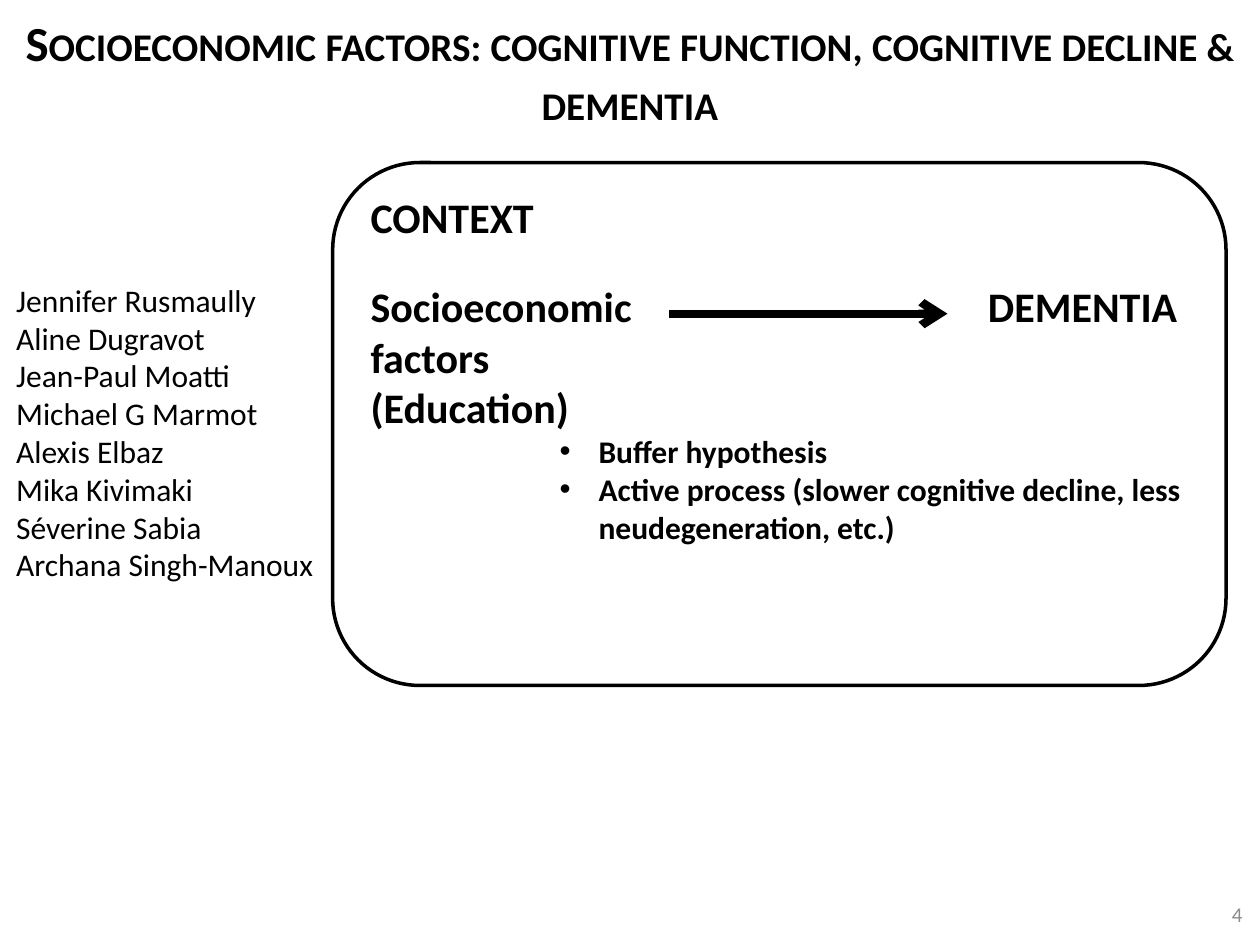
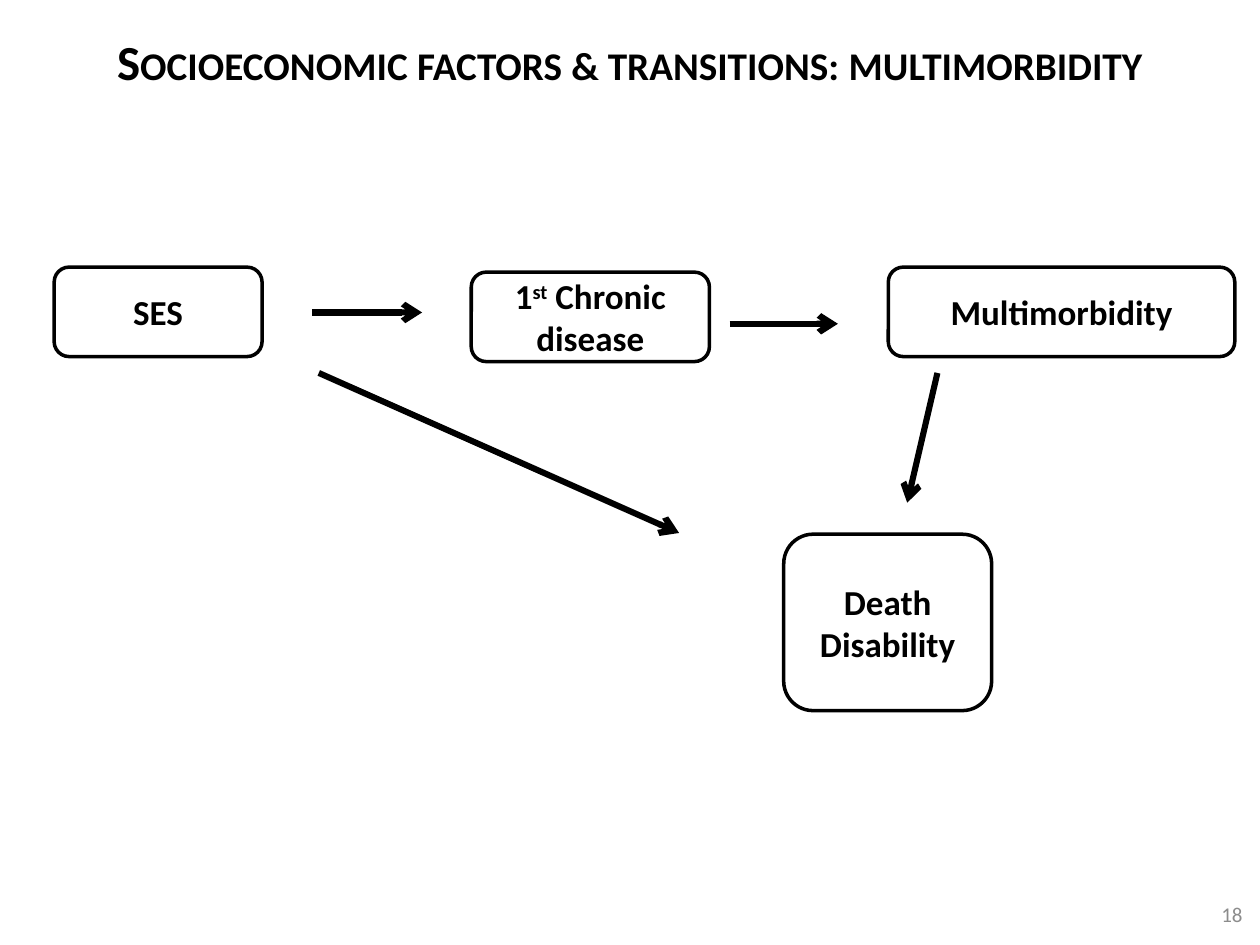
from lxml import etree
from pptx import Presentation
from pptx.dml.color import RGBColor
from pptx.enum.shapes import MSO_CONNECTOR as Connector, MSO_SHAPE as Shape
from pptx.enum.text import MSO_ANCHOR as Anchor, PP_ALIGN as Align
from pptx.oxml.ns import qn
from pptx.util import Inches, Pt

BLACK = RGBColor(0, 0, 0)
GREY = RGBColor(0x8C, 0x8C, 0x8C)
FONT = "Calibri"

AUTHORS = [
    "Jennifer Rusmaully", "Aline Dugravot", "Jean-Paul Moatti",
    "Michael G Marmot", "Alexis Elbaz", "Mika Kivimaki",
    "Séverine Sabia", "Archana Singh-Manoux",
]
CONTEXT = [
    {"text": "CONTEXT"},
    {"text": "Socioeconomic\tDEMENTIA", "before": 22, "tab": 4.9},
    {"text": "factors"},
    {"text": "(Education)"},
    {"text": "Buffer hypothesis", "size": 18, "bullet": True},
    {"text": "Active process (slower cognitive decline, less neudegeneration, etc.)",
     "size": 18, "bullet": True},
]
STATES = [
    (["SES"], (0.43, 2.12, 1.65, 0.71)),
    (["Multimorbidity"], (7.05, 2.12, 2.75, 0.71)),
    (["Death", "Disability"], (6.22, 4.24, 1.65, 1.4)),
    ([("1", "st", " Chronic disease")], (3.74, 2.16, 1.89, 0.71)),
]
TRANSITIONS = [
    ((2.48, 2.48), (3.35, 2.48)),
    ((5.79, 2.57), (6.65, 2.57)),
    ((2.53, 2.96), (5.39, 4.23)),
    ((7.44, 2.96), (7.2, 3.99)),
]


def write(para, text, size=20, bold=False, color=BLACK, align=Align.LEFT,
          small_caps=False, before=0, tab=None, bullet=False):
    para.alignment = align
    para.space_before = Pt(before)
    props = para._p.get_or_add_pPr()
    if bullet:
        props.set("marL", str(Inches(1.81)))
        props.set("indent", str(-Inches(0.31)))
        etree.SubElement(props, qn("a:buFont"), typeface="Arial")
        etree.SubElement(props, qn("a:buChar"), char="•")
    if tab:
        stops = etree.SubElement(props, qn("a:tabLst"))
        etree.SubElement(stops, qn("a:tab"), pos=str(Inches(tab)), algn="l")
    pieces = [text] if isinstance(text, str) else text
    for index, piece in enumerate(pieces):
        span = para.add_run()
        span.text = piece
        span.font.name = FONT
        span.font.size = Pt(size)
        span.font.bold = bold
        span.font.color.rgb = color
        if small_caps:
            span._r.get_or_add_rPr().set("cap", "small")
        if index % 2:
            span._r.get_or_add_rPr().set("baseline", "30000")


def fill_text(box, lines, anchor=Anchor.MIDDLE, **style):
    frame = box.text_frame
    frame.word_wrap = True
    frame.vertical_anchor = anchor
    for index, line in enumerate(lines):
        para = frame.add_paragraph() if index else frame.paragraphs[0]
        details = line if isinstance(line, dict) else {"text": line}
        write(para, **{**style, **details})


def add_text(page, place, lines, **style):
    box = page.shapes.add_textbox(*map(Inches, place))
    fill_text(box, lines, **style)


def add_frame(page, place, lines, **style):
    box = page.shapes.add_shape(Shape.ROUNDED_RECTANGLE, *map(Inches, place))
    box.shadow.inherit = False
    box.fill.background()
    box.line.color.rgb = BLACK
    box.line.width = Pt(2)
    fill_text(box, lines, bold=True, **style)
    return box


def add_arrow(page, start, end, width):
    arrow = page.shapes.add_connector(Connector.STRAIGHT, *map(Inches, start + end))
    arrow.line.color.rgb = BLACK
    arrow.line.width = Pt(width)
    etree.SubElement(arrow.line._get_or_add_ln(), qn("a:tailEnd"), type="arrow")
    etree.SubElement(arrow._element.spPr, qn("a:effectLst"))


def add_page(deck, title, title_top, number):
    page = deck.slides.add_slide(deck.slide_layouts[6])
    add_text(page, (0, title_top, 10, 0.87), [title], size=28, bold=True,
             align=Align.CENTER, small_caps=True)
    add_text(page, (9.17, 7.06, 0.79, 0.39), [number], size=12, color=GREY,
             align=Align.RIGHT)
    return page


def main():
    deck = Presentation()
    deck.slide_width, deck.slide_height = Inches(10), Inches(7.5)

    page = add_page(
        deck, "Socioeconomic factors: cognitive function, cognitive decline & dementia",
        0.13, "4")
    add_text(page, (0.03, 2.18, 2.6, 2.83), AUTHORS, size=18, anchor=Anchor.TOP)
    context = add_frame(page, (2.64, 1.29, 7.09, 4.15), CONTEXT, size=24,
                        anchor=Anchor.TOP)
    context.text_frame.margin_top = Inches(0.03)
    add_arrow(page, (5.31, 2.49), (7.52, 2.49), 4.75)

    page = add_page(
        deck, "Socioeconomic factors & transitions: multimorbidity", 0.05, "18")
    for lines, place in STATES:
        add_frame(page, place, lines, align=Align.CENTER)
    for start, end in TRANSITIONS:
        add_arrow(page, start, end, 3.5)

    deck.save("out.pptx")


if __name__ == "__main__":
    main()
